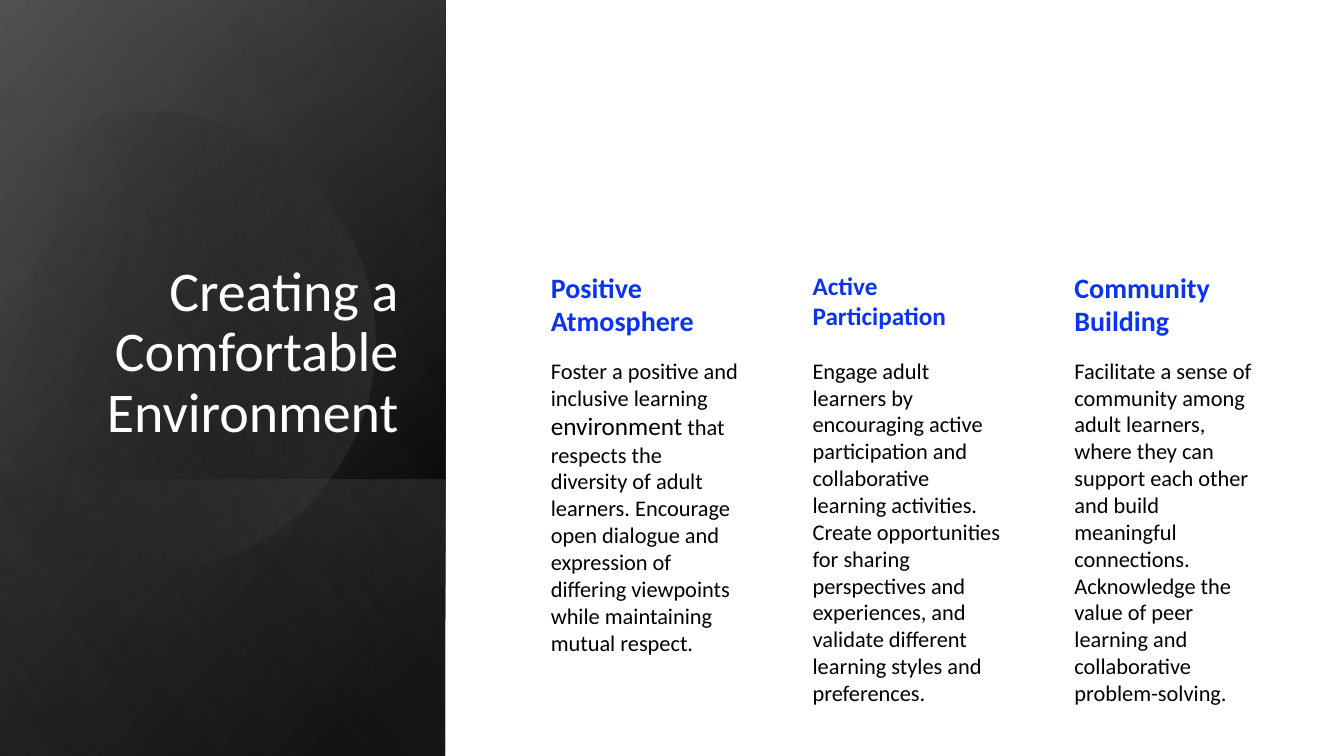
import math

import pptx
import pptx.enum.shapes
import pptx.enum.text
import pptx.oxml
import pptx.util
from pptx.dml.color import RGBColor

Pt = pptx.util.Pt
COLORS = {"white": "FFFFFF", "black": "000000", "blue": "0A34F2",
          "charcoal": "464646", "gray": "5E5E5E", "silver": "9E9E9E"}
DRAWING_NS = "http://schemas.openxmlformats.org/drawingml/2006/main"


def fill_gradient(shape, angle, stops):
    """Fill with (position, color name, opacity) stops, in percent, and drop line and shadow."""
    shape.shadow.inherit = False
    shape.line.fill.background()
    shape.fill.background()
    stop_xml = "".join(
        f'<a:gs pos="{position * 1000}"><a:srgbClr val="{COLORS[color]}">'
        f'<a:alpha val="{opacity * 1000}"/></a:srgbClr></a:gs>'
        for position, color, opacity in stops)
    gradient = pptx.oxml.parse_xml(
        f'<a:gradFill xmlns:a="{DRAWING_NS}" rotWithShape="1"><a:gsLst>{stop_xml}</a:gsLst>'
        f'<a:lin ang="{angle * 60000}" scaled="0"/></a:gradFill>')
    no_fill = shape._element.spPr.find(f"{{{DRAWING_NS}}}noFill")
    no_fill.getparent().replace(no_fill, gradient)


def add_text(spans, left, top, width, height, color="black", bold=False,
             align="LEFT", anchor="TOP", line_spacing=None, space_after=6):
    """Add one paragraph made of (text, size) spans."""
    box = slide.shapes.add_textbox(Pt(left), Pt(top), Pt(width), Pt(height))
    box.text_frame.word_wrap = True
    box.text_frame.vertical_anchor = pptx.enum.text.MSO_ANCHOR[anchor]
    para = box.text_frame.paragraphs[0]
    para.alignment = pptx.enum.text.PP_ALIGN[align]
    para.line_spacing = line_spacing
    para.space_after = Pt(space_after)
    for text, size in spans:
        span = para.add_run()
        span.text = text
        span.font.name = "Calibri"
        span.font.size = Pt(size)
        span.font.bold = bold
        span.font.color.rgb = RGBColor.from_string(COLORS[color])


deck = pptx.Presentation()
deck.slide_width, deck.slide_height = Pt(960), Pt(540)
slide = deck.slides.add_slide(deck.slide_layouts[6])
RECTANGLE = pptx.enum.shapes.MSO_SHAPE.RECTANGLE

backdrop = slide.shapes.add_shape(RECTANGLE, 0, 0, Pt(960), Pt(540))
backdrop.shadow.inherit = False
backdrop.fill.solid()
backdrop.fill.fore_color.rgb = RGBColor.from_string(COLORS["white"])
backdrop.line.fill.background()

# Dark side panel: layers standing on end, with a faint disc below the last one
PANEL_WIDTH = 318.2
layers = [
    (0, 540, 50, [(8, "black", 100), (100, "charcoal", 100)]),
    (0, 540, 30, [(0, "black", 0), (99, "gray", 46)]),
    (342.8, 197.2, 130, [(2, "gray", 29), (100, "black", 30)]),
    "disc",
    (0, 540, 120, [(0, "black", 0), (99, "silver", 11)]),
]
DISC_CENTER = (114.1, 240.8)
DISC_TILT = 343.9
disc_start = (107.3, 79.2)
disc_segments = [
    [(177.1, 80.6), (241.2, 127.4), (261.4, 198)],
    [(286.6, 285.8), (236.2, 376.6), (149, 401.8)],
    [(94.3, 417.6), (38.2, 403.9), (-2.2, 370.1)],
    [(-10.8, 362.2)],
    [(-10.8, 126)],
    [(0, 115.9)],
    [(16.6, 102.2), (36, 92.2), (57.6, 85.7)],
    [(74.2, 81.4), (90.7, 79.2), disc_start],
]
STEPS = 24

for layer in layers:
    if layer == "disc":
        outline = [disc_start]
        for segment in disc_segments:
            if len(segment) == 1:
                outline += segment
                continue
            curve = [outline[-1]] + segment
            for step in range(1, STEPS + 1):
                t = step / STEPS
                weights = [math.comb(3, k) * t ** k * (1 - t) ** (3 - k) for k in range(4)]
                outline.append(tuple(sum(w * point[axis] for w, point in zip(weights, curve))
                                     for axis in (0, 1)))
        # Turn the outline back, so that the shape's own rotation restores it
        turn = math.radians(360 - DISC_TILT)
        turned = []
        for x, y in outline:
            dx, dy = x - DISC_CENTER[0], y - DISC_CENTER[1]
            turned.append((Pt(DISC_CENTER[0] + dx * math.cos(turn) - dy * math.sin(turn)),
                           Pt(DISC_CENTER[1] + dx * math.sin(turn) + dy * math.cos(turn))))
        builder = slide.shapes.build_freeform(*turned[0])
        builder.add_line_segments(turned[1:], close=True)
        disc = builder.convert_to_shape()
        disc.rotation = DISC_TILT
        fill_gradient(disc, 30, [(29, "black", 0), (100, "gray", 43)])
        continue
    top, height, angle, stops = layer
    panel = slide.shapes.add_shape(
        RECTANGLE, Pt((PANEL_WIDTH - height) / 2), Pt(top + (height - PANEL_WIDTH) / 2),
        Pt(height), Pt(PANEL_WIDTH))
    panel.rotation = 90
    panel._element.spPr.xfrm.set("flipH", "1")
    fill_gradient(panel, angle, stops)

add_text([("Creating a Comfortable Environment", 40)], 46.1, 132.5, 245.5, 188.6,
         color="white", align="RIGHT", anchor="BOTTOM", line_spacing=0.9, space_after=0)

columns = [
    ("Positive Atmosphere", 20, [
        ("Foster a positive and inclusive learning ", 16),
        ("environment", 18),
        (" that respects the diversity of adult learners. Encourage open dialogue and "
         "expression of differing viewpoints while maintaining mutual respect.", 16)]),
    ("Active Participation", 18, [
        ("Engage adult learners by encouraging active participation and collaborative "
         "learning activities. Create opportunities for sharing perspectives and "
         "experiences, and validate different learning styles and preferences.", 16)]),
    ("Community Building", 20, [
        ("Facilitate a sense of community among adult learners, where they can support "
         "each other and build meaningful connections. Acknowledge the value of peer "
         "learning and collaborative problem-solving.", 16)]),
]
for index, (heading, heading_size, body) in enumerate(columns):
    left = 386.4 + 187 * index
    add_text([(heading, heading_size)], left, 189.4, 151.2, 38.2, color="blue", bold=True)
    add_text(body, left, 251.3, 151.2, 106.6)

deck.save("out.pptx")
